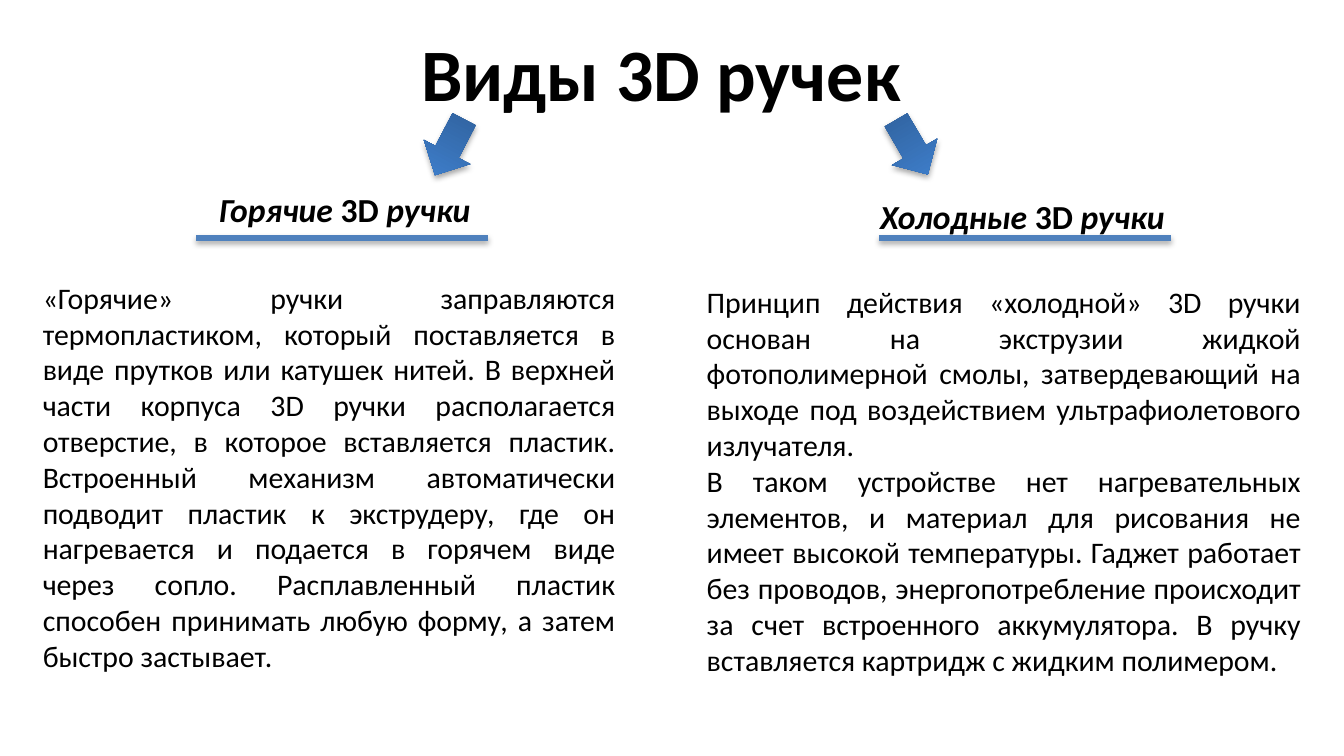
from copy import deepcopy

from lxml.etree import SubElement
from pptx import Presentation
from pptx.dml.color import RGBColor
from pptx.enum.shapes import MSO_CONNECTOR, MSO_SHAPE
from pptx.enum.text import MSO_ANCHOR, MSO_AUTO_SIZE, PP_ALIGN
from pptx.oxml.ns import qn
from pptx.util import Inches, Pt

FONT = "Calibri"
COLORS = {
    "text": "000000",
    "line": "4F81BD",
    "arrow_dark": "2F5F99",
    "arrow_middle": "3D7CC7",
    "arrow_light": "3A7CCB",
    "shadow": "000000",
}
TITLE = "Виды 3D ручек"
COLUMNS = [
    {
        "heading": ["Горячие ", "3D ", "ручки"],
        "heading_box": (1.53, 1.36, 2.1, 0.4),
        "underline_left": 1.46,
        "arrow_left": 3.15,
        "arrow_rotation": 207.5,
        "body_box": (0.22, 2.03, 4.46, 3.06),
        "body": [
            "«Горячие» ручки заправляются термопластиком, который поставляется в виде "
            "прутков или катушек нитей. В верхней части корпуса 3D ручки располагается "
            "отверстие, в которое вставляется пластик. Встроенный механизм автоматически "
            "подводит пластик к экструдеру, где он нагревается и подается в горячем виде "
            "через сопло. Расплавленный пластик способен принимать любую форму, а затем "
            "быстро застывает. ",
        ],
    },
    {
        "heading": ["Холодные ", "3D ", "ручки"],
        "heading_box": (6.45, 1.41, 2.34, 0.4),
        "underline_left": 6.54,
        "arrow_left": 6.59,
        "arrow_rotation": 149.7,
        "body_box": (5.16, 2.06, 4.62, 3.06),
        "body": [
            "Принцип действия «холодной» 3D ручки основан на экструзии жидкой "
            "фотополимерной смолы, затвердевающий на выходе под воздействием "
            "ультрафиолетового излучателя. ",
            "В таком устройстве нет нагревательных элементов, и материал для рисования "
            "не имеет высокой температуры. Гаджет работает без проводов, "
            "энергопотребление происходит за счет встроенного аккумулятора. В ручку "
            "вставляется картридж с жидким полимером.",
        ],
    },
]
ARROW_TOP, ARROW_WIDTH, ARROW_HEIGHT = 0.86, 0.39, 0.47
UNDERLINE_TOP, UNDERLINE_WIDTH = 1.77, 2.17


def color(name):
    return RGBColor.from_string(COLORS[name])


def add_text(slide, box, paragraphs, size, align, bold=False, wrap=True):
    shape = slide.shapes.add_textbox(*map(Inches, box))
    frame = shape.text_frame
    frame.word_wrap = wrap
    frame.auto_size = MSO_AUTO_SIZE.SHAPE_TO_FIT_TEXT
    for index, runs in enumerate(paragraphs):
        paragraph = frame.add_paragraph() if index else frame.paragraphs[0]
        paragraph.alignment = align
        for text, italic in runs:
            run = paragraph.add_run()
            run.text = text
            run.font.name = FONT
            run.font.size = Pt(size)
            run.font.bold = bold
            run.font.italic = italic
            run.font.color.rgb = color("text")
    return frame


def add_shadow(shape):
    effects = SubElement(shape._element.spPr, qn("a:effectLst"))
    shadow = SubElement(
        effects, qn("a:outerShdw"), blurRad=str(Pt(3.1)), dist=str(Pt(1.8)),
        dir="5400000", rotWithShape="0",
    )
    shade = SubElement(shadow, qn("a:srgbClr"), val=COLORS["shadow"])
    SubElement(shade, qn("a:alpha"), val="35000")


def add_arrow(slide, left, rotation):
    arrow = slide.shapes.add_shape(
        MSO_SHAPE.UP_ARROW, Inches(left), Inches(ARROW_TOP),
        Inches(ARROW_WIDTH), Inches(ARROW_HEIGHT),
    )
    arrow.rotation = rotation
    arrow.line.fill.background()
    arrow.fill.gradient()
    arrow.fill.gradient_angle = 90
    stops = arrow._element.spPr.find(qn("a:gradFill")).find(qn("a:gsLst"))
    stops.insert(1, deepcopy(stops[0]))
    names = ("arrow_dark", "arrow_middle", "arrow_light")
    for stop, name, position in zip(arrow.fill.gradient_stops, names, (0, 0.8, 1)):
        stop.color.rgb = color(name)
        stop.position = position
    add_shadow(arrow)


def add_underline(slide, left):
    top = Inches(UNDERLINE_TOP)
    underline = slide.shapes.add_connector(
        MSO_CONNECTOR.STRAIGHT, Inches(left), top, Inches(left + UNDERLINE_WIDTH), top
    )
    underline.line.color.rgb = color("line")
    underline.line.width = Pt(3)
    add_shadow(underline)


def main():
    presentation = Presentation()
    presentation.slide_width = Inches(10)
    presentation.slide_height = presentation.slide_width * 9 // 16
    slide = presentation.slides.add_slide(presentation.slide_layouts[6])

    title = add_text(slide, (0.67, 0.14, 8.5, 0.79), [[(TITLE, False)]],
                     39.6, PP_ALIGN.CENTER, bold=True)
    title.auto_size = MSO_AUTO_SIZE.NONE
    title.vertical_anchor = MSO_ANCHOR.MIDDLE

    for column in COLUMNS:
        add_arrow(slide, column["arrow_left"], column["arrow_rotation"])
        heading = [(text, text != "3D ") for text in column["heading"]]
        add_text(slide, column["heading_box"], [heading], 18, PP_ALIGN.LEFT,
                 bold=True, wrap=False)
        add_underline(slide, column["underline_left"])
        body = [[(text, False)] for text in column["body"]]
        add_text(slide, column["body_box"], body, 16, PP_ALIGN.JUSTIFY)

    presentation.save("out.pptx")


if __name__ == "__main__":
    main()
